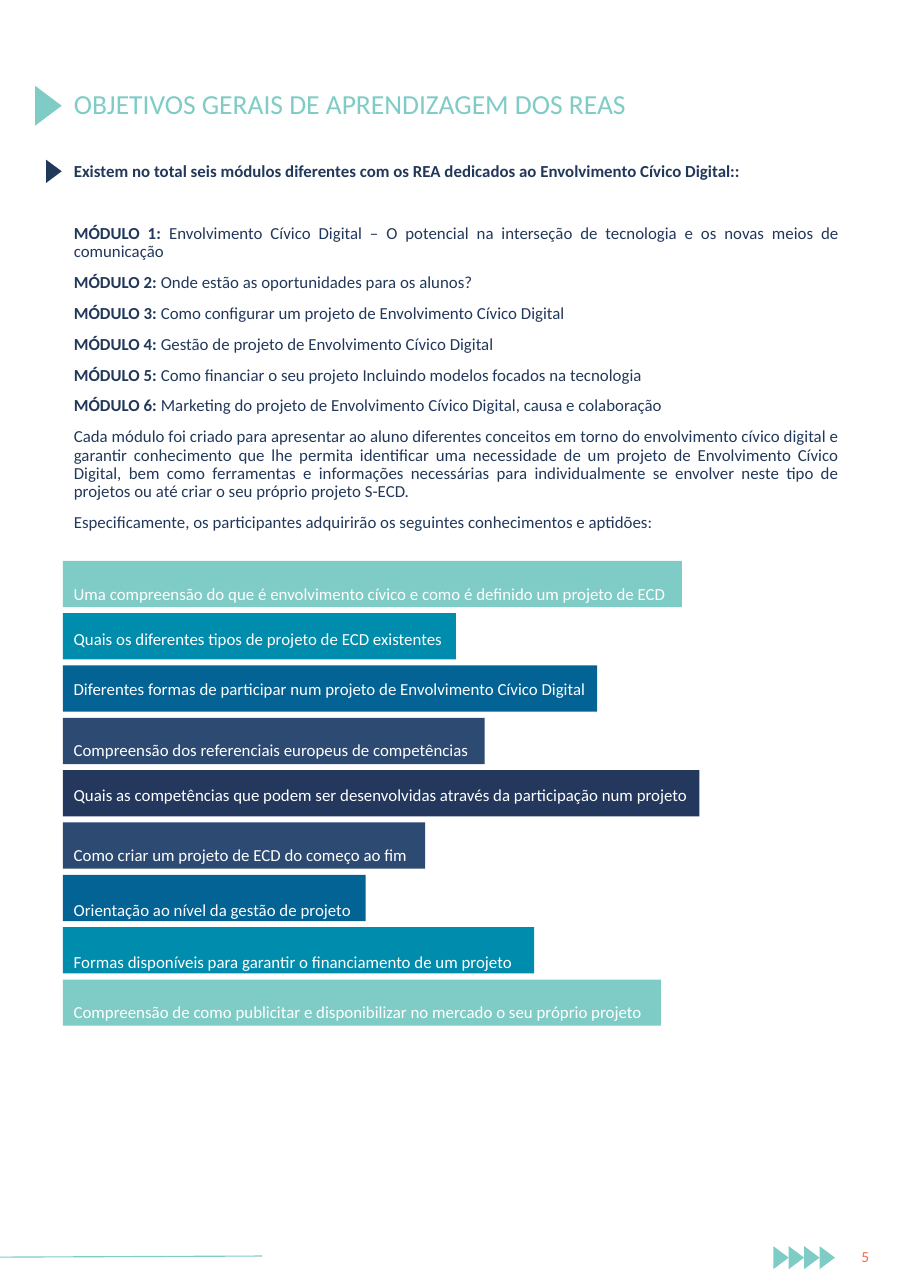
from lxml import etree
from pptx import Presentation
from pptx.dml.color import RGBColor
from pptx.enum.shapes import MSO_CONNECTOR, MSO_SHAPE
from pptx.enum.text import MSO_ANCHOR, MSO_AUTO_SIZE, PP_ALIGN
from pptx.oxml.ns import qn
from pptx.util import Inches, Pt

LEFT, CENTER, JUSTIFY = PP_ALIGN.LEFT, PP_ALIGN.CENTER, PP_ALIGN.JUSTIFY
TOP, MIDDLE = MSO_ANCHOR.TOP, MSO_ANCHOR.MIDDLE
NO_FIT = MSO_AUTO_SIZE.NONE
RECT = MSO_SHAPE.RECTANGLE
STRAIGHT = MSO_CONNECTOR.STRAIGHT

FONT = "Calibri"
AQUA = RGBColor(0x7F, 0xCC, 0xC7)
TEAL = RGBColor(0x00, 0x8C, 0xAC)
BLUE = RGBColor(0x02, 0x63, 0x94)
SLATE = RGBColor(0x2D, 0x4A, 0x73)
NAVY = RGBColor(0x23, 0x38, 0x5C)
INK = RGBColor(0x22, 0x38, 0x5A)
CORAL = RGBColor(0xF2, 0x6B, 0x4D)
WHITE = RGBColor(0xFF, 0xFF, 0xFF)

TITLE = "OBJETIVOS GERAIS DE APRENDIZAGEM DOS REAS"
LEAD = ("Existem no total seis módulos diferentes com os REA dedicados ao "
        "Envolvimento Cívico Digital::")
MODULES = [
    "Envolvimento Cívico Digital – O potencial na interseção de tecnologia "
    "e os novas meios de comunicação",
    "Onde estão as oportunidades para os alunos?",
    "Como configurar um projeto de Envolvimento Cívico Digital",
    "Gestão de projeto de Envolvimento Cívico Digital",
    "Como financiar o seu projeto Incluindo modelos focados na tecnologia",
    "Marketing do projeto de Envolvimento Cívico Digital, causa e colaboração",
]
CLOSING = [
    "Cada módulo foi criado para apresentar ao aluno diferentes conceitos em "
    "torno do envolvimento cívico digital e garantir conhecimento que lhe "
    "permita identificar uma necessidade de um projeto de Envolvimento Cívico "
    "Digital, bem como ferramentas e informações necessárias para "
    "individualmente se envolver neste tipo de projetos ou até criar o seu "
    "próprio projeto S-ECD.",
    "Especificamente, os participantes adquirirão os seguintes conhecimentos "
    "e aptidões:",
]
# Text, bar width, text inset from the top of the bar, fill
SKILLS = [
    ("Uma compreensão do que é envolvimento cívico e como é definido um "
     "projeto de ECD", 5.62, 0.21, AQUA),
    ("Quais os diferentes tipos de projeto de ECD existentes",
     3.57, 0.14, TEAL),
    ("Diferentes formas de participar num projeto de Envolvimento Cívico "
     "Digital", 4.85, 0.12, BLUE),
    ("Compreensão dos referenciais europeus de competências",
     3.83, 0.2, SLATE),
    ("Quais as competências que podem ser desenvolvidas através da "
     "participação num projeto", 5.78, 0.13, NAVY),
    ("Como criar um projeto de ECD do começo ao fim", 3.29, 0.2, SLATE),
    ("Orientação ao nível da gestão de projeto", 2.75, 0.23, BLUE),
    ("Formas disponíveis para garantir o financiamento de um projeto",
     4.28, 0.22, TEAL),
    ("Compreensão de como publicitar e disponibilizar no mercado o seu "
     "próprio projeto", 5.43, 0.2, AQUA),
]


def add_run(p, text, size=11, color=INK, bold=False):
    r = p.add_run()
    r.text = text
    r.font.name, r.font.size, r.font.bold = FONT, Pt(size), bold
    r.font.color.rgb = color


def format_paragraph(p, align=LEFT, before=0, spacing=1.0):
    p.alignment = align
    p.space_before, p.space_after = Pt(before), Pt(0)
    p.line_spacing = spacing


def place(sp, x, y, w, h):
    sp.left, sp.top, sp.width, sp.height = map(Inches, (x, y, w, h))


def add_triangle(s, x, y, w, h, color):
    """Right-pointing marker."""
    builder = s.shapes.build_freeform(Inches(x), Inches(y))
    builder.add_line_segments(
        [(Inches(x + w), Inches(y + h / 2)), (Inches(x), Inches(y + h))])
    sp = builder.convert_to_shape()
    sp.shadow.inherit = False
    sp.fill.solid()
    sp.fill.fore_color.rgb = color
    sp.line.fill.background()


def add_title(s, x, y, w, h):
    sp = s.shapes.title
    place(sp, x, y, w, h)
    tf = sp.text_frame
    tf.auto_size, tf.vertical_anchor = NO_FIT, MIDDLE
    format_paragraph(tf.paragraphs[0], spacing=0.9)
    add_run(tf.paragraphs[0], TITLE, size=18, color=AQUA)
    add_triangle(s, x - 0.25, y + 0.17, 0.24, 0.36, AQUA)


def add_body(s, x, y, w, h):
    sp = s.placeholders[1]
    place(sp, x, y, w, h)
    tf = sp.text_frame
    tf.auto_size, tf.vertical_anchor = NO_FIT, TOP

    # Label, text and space before each paragraph
    rows = [(LEAD, "", 0)]
    for i, text in enumerate(MODULES, 1):
        rows.append((f"MÓDULO {i}: ", text, 28.5 if i == 1 else 8.3))
    rows += [("", text, 8.3) for text in CLOSING]

    for i, (label, text, before) in enumerate(rows):
        p = tf.add_paragraph() if i else tf.paragraphs[0]
        format_paragraph(p, JUSTIFY, before, 0.9)
        # No bullet and no hanging indent
        pPr = p._p.get_or_add_pPr()
        pPr.set("marL", "0")
        pPr.set("indent", "0")
        etree.SubElement(pPr, qn("a:buNone"))
        if label:
            add_run(p, label, bold=True)
        if text:
            add_run(p, text)
    add_triangle(s, x - 0.15, y + 0.02, 0.14, 0.21, INK)


def add_skill_bars(s, x, y, h):
    bar_h = 0.42
    pitch = (h - bar_h) / (len(SKILLS) - 1)
    for i, (text, w, inset, color) in enumerate(SKILLS):
        sp = s.shapes.add_shape(RECT, Inches(x), Inches(y + i * pitch),
                                Inches(w), Inches(bar_h))
        sp.shadow.inherit = False
        sp.fill.solid()
        sp.fill.fore_color.rgb = color
        sp.line.fill.background()
        tf = sp.text_frame
        tf.word_wrap, tf.vertical_anchor = False, TOP
        tf.margin_top, tf.margin_bottom = Inches(inset), 0
        format_paragraph(tf.paragraphs[0])
        add_run(tf.paragraphs[0], text, color=WHITE)


def add_footer(s, x, y, w, h):
    # Rule on the left
    line = s.shapes.add_connector(STRAIGHT, Inches(x), Inches(y + 0.15),
                                  Inches(x + 2.38), Inches(y + 0.14))
    line.line.color.rgb, line.line.width = AQUA, Pt(0.75)
    etree.SubElement(line._element.spPr, qn("a:effectLst"))
    # Row of markers
    for i in range(4):
        add_triangle(s, x + w - 1.25 + i * 0.14, y + 0.05, 0.14, 0.21, AQUA)
    # Page number
    sp = s.shapes.add_textbox(Inches(x + w - 0.61), Inches(y),
                              Inches(0.39), Inches(h))
    tf = sp.text_frame
    tf.word_wrap, tf.vertical_anchor = True, MIDDLE
    format_paragraph(tf.paragraphs[0], CENTER)
    add_run(tf.paragraphs[0], "5", size=10, color=CORAL)


def main():
    prs = Presentation()
    prs.slide_width, prs.slide_height = Inches(8.27), Inches(11.69)
    s = prs.slides.add_slide(prs.slide_layouts[1])
    add_footer(s, 0, 11.26, 8.27, 0.29)
    add_title(s, 0.57, 0.61, 7.15, 0.7)
    add_body(s, 0.57, 1.43, 7.15, 3.55)
    add_skill_bars(s, 0.57, 5.09, 4.22)
    prs.save("out.pptx")


if __name__ == "__main__":
    main()
